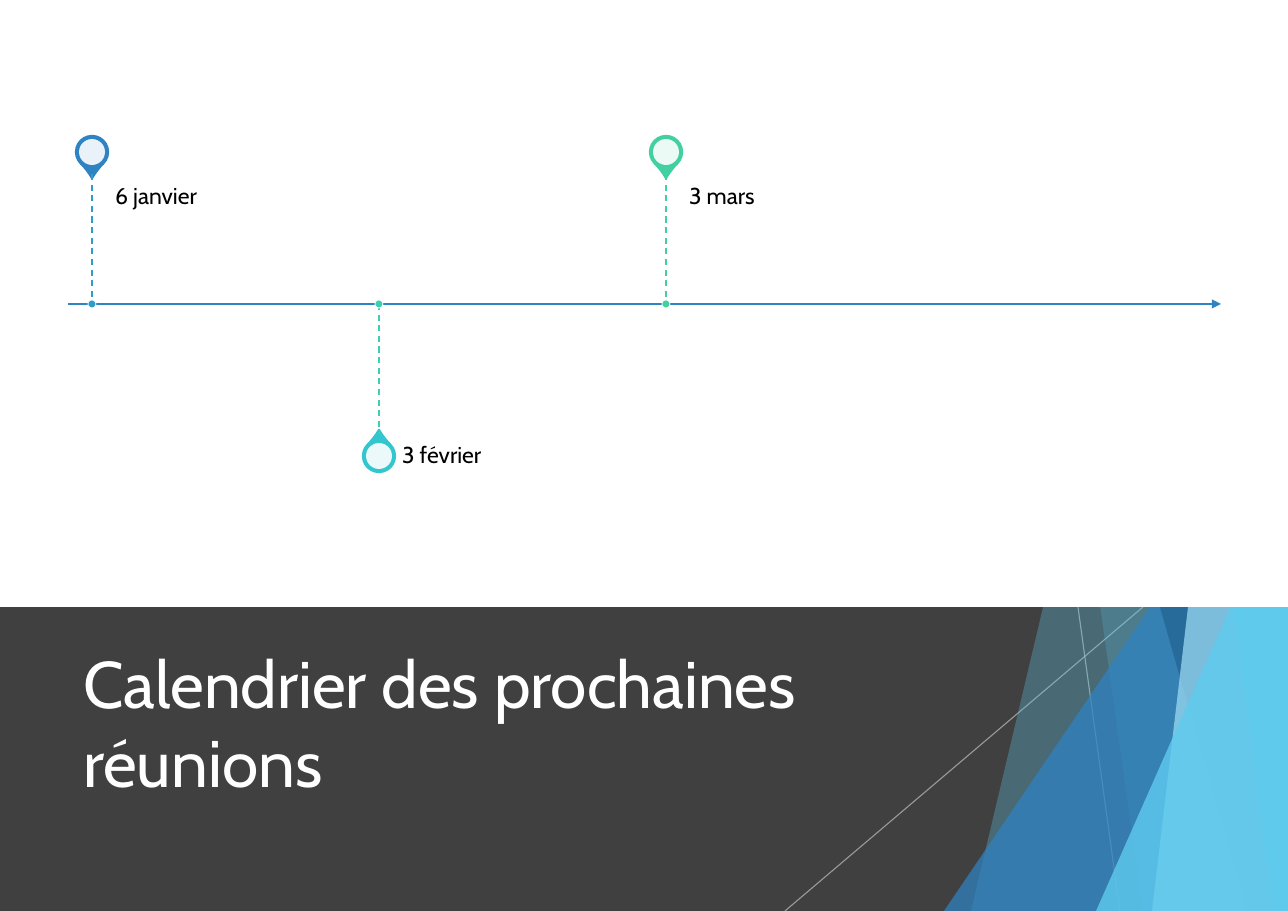
import pptx
import pptx.dml.color
import pptx.enum.dml
import pptx.enum.shapes
import pptx.enum.text
import pptx.oxml
import pptx.oxml.ns
import pptx.util

PX = 914400 / 110.2
WIDTH, HEIGHT = 1288, 911
BAND_TOP = 607
AXIS_Y = 304
FIRST_X, STEP_X = 92, 287
FONT = "Cabin"
BLUE, SKY, GREY, WHITE = "2E83C3", "5FCBEF", "BFBFBF", "FFFFFF"
SHAPES = pptx.enum.shapes.MSO_SHAPE
ANCHOR = pptx.enum.text.MSO_ANCHOR
MEETINGS = [
    ("6 janvier", BLUE, "309DC8", -1),
    ("3 février", "34C6CE", "3CCFB6", 1),
    ("3 mars", "42D0A2", "42D0A2", -1),
]


def px(length):
    return pptx.util.Emu(round(length * PX))


def rgb(color):
    return pptx.dml.color.RGBColor.from_string(color)


def add_xml(parent, tag, attributes=""):
    namespace = pptx.oxml.ns.nsdecls("a")
    parent.append(pptx.oxml.parse_xml(f"<a:{tag} {namespace} {attributes}/>"))


def set_opacity(shape, percent):
    if percent < 100:
        color = next(shape.element.iter(pptx.oxml.ns.qn("a:srgbClr")))
        add_xml(color, "alpha", f'val="{percent * 1000}"')


def paint(shape, fill, opacity=100, line=None, line_width=0):
    shape.shadow.inherit = False
    shape.fill.solid()
    shape.fill.fore_color.rgb = rgb(fill)
    set_opacity(shape, opacity)
    if line:
        shape.line.color.rgb = rgb(line)
        shape.line.width = pptx.util.Pt(line_width)
    else:
        shape.line.fill.background()


def add_shape(slide, kind, left, top, width, height, fill, **style):
    shape = slide.shapes.add_shape(kind, px(left), px(top), px(width), px(height))
    paint(shape, fill, **style)
    return shape


def add_round(slide, kind, x, y, size, fill, **style):
    return add_shape(slide, kind, x - size / 2, y - size / 2, size, size, fill, **style)


def add_line(slide, start, end, color, width, opacity=100, dashed=False, arrow=False):
    connector = slide.shapes.add_connector(
        pptx.enum.shapes.MSO_CONNECTOR.STRAIGHT, *map(px, start + end))
    connector.line.color.rgb = rgb(color)
    connector.line.width = pptx.util.Pt(width)
    set_opacity(connector, opacity)
    if dashed:
        connector.line.dash_style = pptx.enum.dml.MSO_LINE.DASH
    properties = connector.element.spPr
    if arrow:
        add_xml(properties.find(pptx.oxml.ns.qn("a:ln")), "tailEnd", 'type="triangle"')
    add_xml(properties, "effectLst")


def add_facet(slide, top_x, bottom_x, fill, opacity):
    builder = slide.shapes.build_freeform(top_x, 0, scale=PX)
    builder.add_line_segments([(WIDTH, 0), (WIDTH, HEIGHT), (bottom_x, HEIGHT)])
    paint(builder.convert_to_shape(), fill, opacity)


def add_corner(slide, left, top, fill, opacity):
    corner = add_shape(slide, SHAPES.ISOSCELES_TRIANGLE, left, top,
                       WIDTH - left, HEIGHT - top, fill, opacity=opacity)
    corner.adjustments[0] = 1


def format_text(text_frame, text, size, color, anchor):
    text_frame.text = text
    text_frame.word_wrap = True
    text_frame.auto_size = pptx.enum.text.MSO_AUTO_SIZE.NONE
    text_frame.vertical_anchor = anchor
    paragraph = text_frame.paragraphs[0]
    paragraph.alignment = pptx.enum.text.PP_ALIGN.LEFT
    paragraph.font.name = FONT
    paragraph.font.size = pptx.util.Pt(size)
    paragraph.font.color.rgb = rgb(color)
    return paragraph


def add_label(slide, text, left, top, height, margin_top, margin_bottom, anchor):
    text_frame = slide.shapes.add_textbox(px(left), px(top), px(478), px(height)).text_frame
    text_frame.margin_left = 0
    text_frame.margin_top = px(margin_top)
    text_frame.margin_bottom = px(margin_bottom)
    format_text(text_frame, text, 15, "000000", anchor).line_spacing = 0.9


def add_meeting(slide, x, text, pin_color, stem_color, side):
    pin_y = AXIS_Y + side * 152
    stem_y = AXIS_Y + side * 130
    pin = add_round(slide, SHAPES.TEAR, x, pin_y, 32, pin_color,
                    line=pin_color, line_width=1.5)
    pin.adjustments[0] = 1.15
    pin.rotation = 135 if side < 0 else 315
    add_round(slide, SHAPES.OVAL, x, pin_y, 26, WHITE, opacity=90)
    if side < 0:
        add_label(slide, text, x + 23, stem_y, 130, 11, 18, ANCHOR.TOP)
    else:
        add_label(slide, text, x + 23, stem_y, 45, 0, 0, ANCHOR.MIDDLE)
    add_line(slide, (x, min(AXIS_Y, stem_y)), (x, max(AXIS_Y, stem_y)),
             stem_color, 1, dashed=True)
    add_round(slide, SHAPES.OVAL, x, AXIS_Y, 8, stem_color, line=WHITE, line_width=0.5)


def add_band(slide):
    add_shape(slide, SHAPES.RECTANGLE, 0, BAND_TOP, WIDTH, HEIGHT - BAND_TOP, "404040")
    for top_x, bottom_x in [(1078, 1120), (1143, 785)]:
        add_line(slide, (top_x, BAND_TOP), (bottom_x, HEIGHT), GREY, 0.75, opacity=70)
    add_facet(slide, 1187, 971, SKY, 30)
    add_facet(slide, 1015, 1143, SKY, 20)
    add_corner(slide, 944, 404, BLUE, 72)
    add_facet(slide, 986, 1247, "226292", 70)
    add_facet(slide, 1260, 1152, "9FE0F5", 70)
    add_facet(slide, 1156, 1273, SKY, 65)
    add_corner(slide, 1096, 477, SKY, 80)


def add_title(slide, text):
    title = slide.shapes.title
    title.left, title.top, title.width, title.height = map(px, (72, 634, 908, 175))
    format_text(title.text_frame, text, 43, WHITE, ANCHOR.MIDDLE)
    title.element.getparent().append(title.element)


def add_timeline(slide):
    add_shape(slide, SHAPES.RECTANGLE, 0, 0, WIDTH, BAND_TOP, WHITE)
    add_line(slide, (68, AXIS_Y), (1221, AXIS_Y), BLUE, 1.5, arrow=True)
    for index, meeting in enumerate(MEETINGS):
        add_meeting(slide, FIRST_X + index * STEP_X, *meeting)


def main():
    presentation = pptx.Presentation()
    presentation.slide_width = px(WIDTH)
    presentation.slide_height = px(HEIGHT)
    slide = presentation.slides.add_slide(presentation.slide_layouts[5])
    add_band(slide)
    add_title(slide, "Calendrier des prochaines réunions")
    add_timeline(slide)
    presentation.save("out.pptx")


if __name__ == "__main__":
    main()
